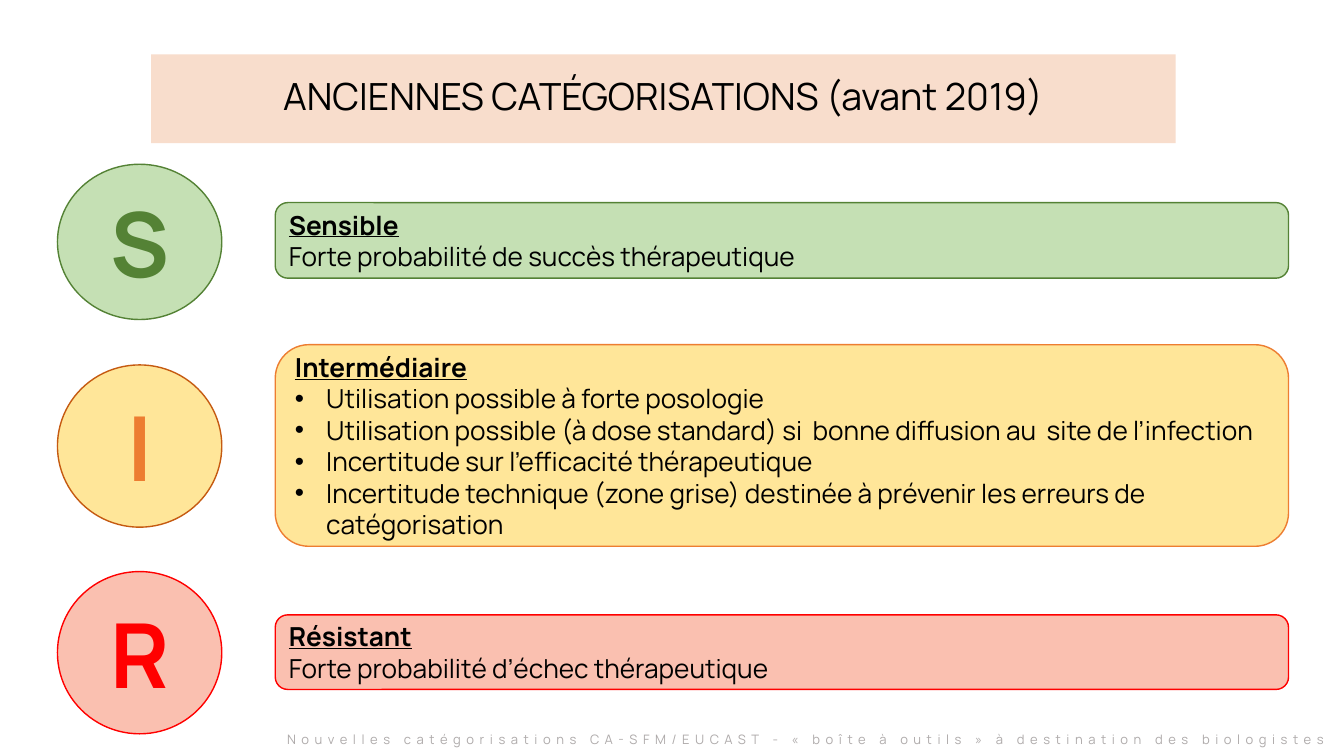
"""Builds the slide on the former S, I and R susceptibility categories."""
from pptx import Presentation
from pptx.dml.color import RGBColor
from pptx.enum.shapes import MSO_SHAPE as Kind
from pptx.enum.text import MSO_ANCHOR as Anchor, PP_ALIGN as Align
from pptx.util import Pt
from lxml.etree import SubElement
from pptx.oxml.ns import qn

PX = 9144
FONT = "Manrope"
SIZE = (1333, 750)
TITLE = "ANCIENNES CATÉGORISATIONS (avant 2019)"
FOOT = "Nouvelles catégorisations CA-SFM/EUCAST - « boîte à outils » à destination des biologistes"
ROWS = [
    dict(mark="S", name="Sensible", fill="C5E0B4", ink="548235", ring="548235",
         disc=(163, 154), card=(201, 75), bullet=False,
         lines=["Forte probabilité de succès thérapeutique"]),
    dict(mark="I", name="Intermédiaire", fill="FFE699", ink="ED7D31", ring="C55A11",
         disc=(362, 161), card=(342, 200), bullet=True,
         lines=["Utilisation possible à forte posologie",
                "Utilisation possible (à dose standard) si  bonne diffusion au  site de l’infection",
                "Incertitude sur l’efficacité thérapeutique",
                "Incertitude technique (zone grise) destinée à prévenir les erreurs de catégorisation"]),
    dict(mark="R", name="Résistant", fill="FAC0B0", ink="FF0000", ring="FF0000",
         disc=(567, 161), card=(610, 74), bullet=False,
         lines=["Forte probabilité d’échec thérapeutique"]),
]
DISC = (57, 163)
CARD = (273, 1005)
INDENT = 31


def color(code):
    return RGBColor.from_string(code)


def write(frame, text, size=18.7, ink="000000", bold=False, under=False,
          align=Align.LEFT, bullet=False, gap=None, lead=None):
    """Adds one paragraph to a frame, filling the first one if it is empty."""
    first = frame.paragraphs[0]
    para = frame.add_paragraph() if first.runs else first
    para.alignment = align
    para.line_spacing = lead
    run = para.add_run()
    run.text = text
    font = run.font
    font.name, font.size, font.bold, font.underline = FONT, Pt(size), bold, under
    font.color.rgb = color(ink)
    if gap:
        run._r.get_or_add_rPr().set("spc", str(gap * 100))
    if bullet:
        props = para._p.get_or_add_pPr()
        props.set("marL", str(INDENT * PX))
        props.set("indent", str(-INDENT * PX))
        SubElement(props, qn("a:buFont")).set("typeface", "Arial")
        SubElement(props, qn("a:buChar")).set("char", "•")


def draw(slide, kind, box, fill, line=None):
    """Adds a filled shape and returns its text frame."""
    shape = slide.shapes.add_shape(kind, *(n * PX for n in box))
    shape.shadow.inherit = False
    shape.fill.solid()
    shape.fill.fore_color.rgb = color(fill)
    if line:
        shape.line.color.rgb = color(line)
        shape.line.width = Pt(1)
    else:
        shape.line.fill.background()
    frame = shape.text_frame
    frame.word_wrap = True
    frame.vertical_anchor = Anchor.MIDDLE
    return frame


def main():
    """Builds and saves the slide."""
    deck = Presentation()
    deck.slide_width, deck.slide_height = (n * PX for n in SIZE)
    slide = deck.slides.add_slide(deck.slide_layouts[6])

    for row in ROWS:
        left, wide = DISC
        top, high = row["disc"]
        disc = draw(slide, Kind.OVAL, (left, top, wide, high), row["fill"], row["ring"])
        write(disc, row["mark"], size=64, ink=row["ink"], bold=True, align=Align.CENTER)

        left, wide = CARD
        top, high = row["card"]
        card = draw(slide, Kind.ROUNDED_RECTANGLE, (left, top, wide, high),
                    row["fill"], row["ink"])
        write(card, row["name"], bold=True, under=True)
        for line in row["lines"]:
            write(card, line, bullet=row["bullet"])

    title = draw(slide, Kind.RECTANGLE, (150, 54, 1016, 88), "F8DDCC")
    write(title, TITLE, size=26.7, align=Align.CENTER, lead=0.9)

    foot = slide.shapes.add_textbox(*(n * PX for n in (65, 720, 1259, 26))).text_frame
    foot.word_wrap = True
    foot.vertical_anchor = Anchor.BOTTOM
    write(foot, FOOT, size=9.3, ink="AFABAB", align=Align.RIGHT, gap=4)

    deck.save("out.pptx")


if __name__ == "__main__":
    main()
